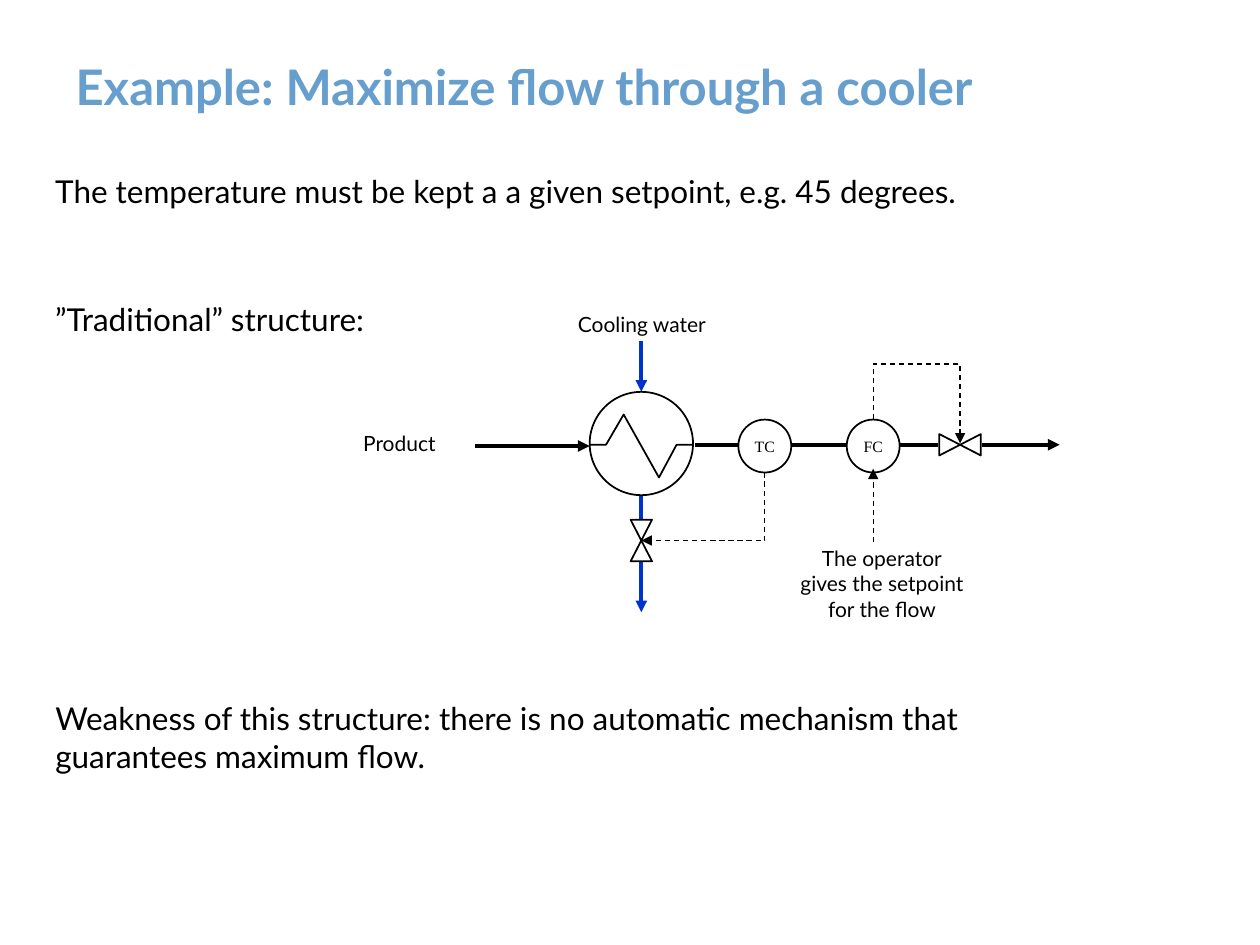
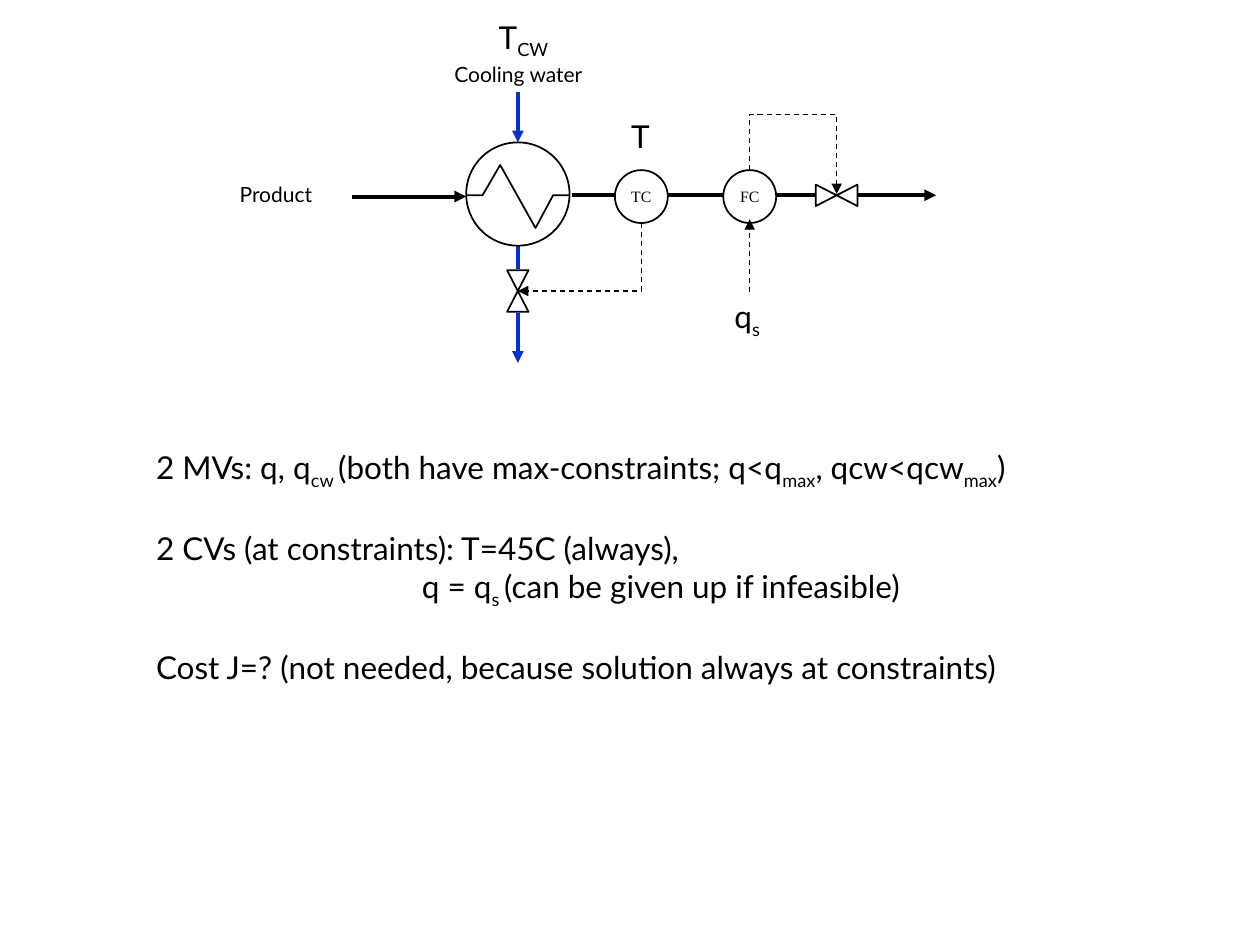
from lxml import etree
from pptx import Presentation, util as u
from pptx.dml.color import RGBColor
from pptx.enum import dml, shapes, text
from pptx.oxml.ns import qn

COLORS = {"title": "669ECD", "ink": "000000", "water": "0033CC", "paper": "FFFFFF"}
FONT = "Lato"
CENTER, LEFT = text.PP_ALIGN.CENTER, text.PP_ALIGN.LEFT
SHAPE = shapes.MSO_SHAPE


def write(frame, paragraphs, align=LEFT, **font_format):
    """Fill a text frame; every second piece between bars is a subscript."""
    values = {"size": u.Pt(18), "name": FONT, "bold": False, **font_format}
    color = values.pop("color", "ink")
    for number, line in enumerate(paragraphs):
        paragraph = frame.paragraphs[0] if number == 0 else frame.add_paragraph()
        paragraph.alignment = align
        for position, piece in enumerate(line.split("|")):
            run = paragraph.add_run()
            run.text = piece
            for attribute, value in values.items():
                setattr(run.font, attribute, value)
            run.font.color.rgb = RGBColor.from_string(COLORS[color])
            if position % 2:
                run._r.get_or_add_rPr().set("baseline", "-25000")


def draw_path(slide, points, color="ink", width=1.0, arrow=False, dashed=False):
    """Draw a connector through two points, or an open outline through more."""
    points = [(u.Inches(x), u.Inches(y)) for x, y in points]
    if len(points) == 2:
        path = slide.shapes.add_connector(shapes.MSO_CONNECTOR.STRAIGHT, *points[0], *points[1])
        etree.SubElement(path._element.spPr, qn("a:effectLst"))
    else:
        builder = slide.shapes.build_freeform(*points[0])
        builder.add_line_segments(points[1:], close=False)
        path = builder.convert_to_shape()
        path.fill.background()
        path.shadow.inherit = False
    path.line.color.rgb = RGBColor.from_string(COLORS[color])
    path.line.width = u.Pt(width)
    if dashed:
        path.line.dash_style = dml.MSO_LINE.DASH
    if arrow:
        etree.SubElement(path.line._get_or_add_ln(), qn("a:tailEnd"), type="triangle")


prs = Presentation()
prs.slide_width, prs.slide_height = u.Inches(10), u.Inches(7.5)
example = prs.slides.add_slide(prs.slide_layouts[5])
analysis = prs.slides.add_slide(prs.slide_layouts[6])

title = example.shapes.title
title.left, title.top, title.width, title.height = map(u.Inches, (0.5, 0.3, 8.91, 0.77))
title.text_frame.vertical_anchor = text.MSO_ANCHOR.MIDDLE
write(title.text_frame, ["Example: Maximize flow through a cooler"],
      size=u.Pt(28), bold=True, color="title")

# Cooler flowsheet, the same on both slides apart from its place
PIPE_Y, COOLER_X, TC_X, FC_X, FLOW_VALVE_X = 3.53, 5.09, 6.07, 6.93, 7.62
WATER_VALVE_Y, COOLER_SIZE, CONTROLLER_SIZE = 4.29, 0.82, 0.42
VALVE_LONG, VALVE_WIDE, MASK_WIDE = 0.33, 0.17, 0.21

pipes = [
    dict(points=[(3.77, 3.54), (4.68, 3.54)], width=2.25, arrow=True),
    dict(points=[(5.52, PIPE_Y), (8.41, PIPE_Y)], width=2.25, arrow=True),
    dict(points=[(COOLER_X, 3.9), (COOLER_X, 4.86)], color="water", width=2.25, arrow=True),
    dict(points=[(COOLER_X, 2.71), (COOLER_X, 3.11)], color="water", width=2.25, arrow=True),
]
# kind, centre x, centre y, width, height, rotation, line colour, label
equipment = [
    (SHAPE.RECTANGLE, FLOW_VALVE_X, PIPE_Y, VALVE_LONG, MASK_WIDE, 0, "paper", ""),
    (SHAPE.FLOWCHART_COLLATE, FLOW_VALVE_X, PIPE_Y, VALVE_WIDE, VALVE_LONG, 270, "ink", ""),
    (SHAPE.RECTANGLE, COOLER_X, WATER_VALVE_Y, MASK_WIDE, VALVE_LONG, 0, "paper", ""),
    (SHAPE.FLOWCHART_COLLATE, COOLER_X, WATER_VALVE_Y, VALVE_WIDE, VALVE_LONG, 0, "ink", ""),
    (SHAPE.OVAL, COOLER_X, 3.52, COOLER_SIZE, COOLER_SIZE, 0, "ink", ""),
    (SHAPE.OVAL, TC_X, 3.54, CONTROLLER_SIZE, CONTROLLER_SIZE, 0, "ink", "TC"),
    (SHAPE.OVAL, FC_X, 3.54, CONTROLLER_SIZE, CONTROLLER_SIZE, 0, "ink", "FC"),
]
coil = [(4.68, PIPE_Y), (4.81, PIPE_Y), (4.95, 3.29), (5.23, 3.79), (5.37, PIPE_Y), (5.5, PIPE_Y)]
signals = [
    [(TC_X, 3.75), (TC_X, WATER_VALVE_Y), (COOLER_X, WATER_VALVE_Y)],
    [(FC_X, 3.33), (FC_X, 2.89), (FLOW_VALVE_X, 2.89), (FLOW_VALVE_X, 3.52)],
    [(FC_X, 4.3), (FC_X, 3.72)],
]
stream_names = [("Cooling water", 4.33, 2.42, 1.53), ("Product", 2.6, 3.37, 1.14)]

for slide, dx, dy in [(example, 0, 0), (analysis, -0.98, -1.98)]:
    for pipe in pipes:
        moved = [(x + dx, y + dy) for x, y in pipe["points"]]
        draw_path(slide, **{**pipe, "points": moved})
    for kind, x, y, width, height, rotation, outline, label in equipment:
        unit = slide.shapes.add_shape(kind, *map(u.Inches, (
            x + dx - width / 2, y + dy - height / 2, width, height)))
        unit.rotation = rotation
        unit.shadow.inherit = False
        unit.fill.solid()
        unit.fill.fore_color.rgb = RGBColor.from_string(COLORS["paper"])
        unit.line.color.rgb = RGBColor.from_string(COLORS[outline])
        unit.line.width = u.Pt(1)
        if label:
            unit.text_frame.word_wrap = False
            unit.text_frame.vertical_anchor = text.MSO_ANCHOR.MIDDLE
            write(unit.text_frame, [label], CENTER, size=u.Pt(9), name="Times New Roman")
    draw_path(slide, [(x + dx, y + dy) for x, y in coil])
    for signal in signals:
        draw_path(slide, [(x + dx, y + dy) for x, y in signal],
                  width=0.75, arrow=True, dashed=True)
    for name, x, y, width in stream_names:
        caption = slide.shapes.add_textbox(*map(u.Inches, (x + dx, y + dy, width, 0.3)))
        caption.text_frame.word_wrap = True
        write(caption.text_frame, [name], CENTER, size=u.Pt(12))

operator = example.shapes.add_textbox(*map(u.Inches, (6.26, 4.29, 1.48, 0.69))).text_frame
operator.word_wrap = True
for side in ("left", "top", "right", "bottom"):
    setattr(operator, f"margin_{side}", u.Inches(0.04))
write(operator, ["The operator", "gives the setpoint for the flow"], CENTER, size=u.Pt(12))

statements = [
    (example, (0.34, 1.32, 8.33, 0.4),
     ["The temperature must be kept a a given setpoint, e.g. 45 degrees."]),
    (example, (0.34, 2.33, 3.13, 0.4), ["”Traditional” structure:"]),
    (example, (0.34, 5.5, 8.21, 0.71),
     ["Weakness of this structure: there is no automatic mechanism that "
      "guarantees maximum flow."]),
    (analysis, (5.73, 2.31, 0.42, 0.4), ["q|s"]),
    (analysis, (4.91, 0.88, 0.35, 0.4), ["T"]),
    (analysis, (3.86, 0.09, 0.6, 0.4), ["T|CW"]),
    (analysis, (1.14, 3.51, 7.36, 1.92),
     ["2 MVs: q, q|cw |(both have max-constraints; q<q|max|, qcw<qcw|max|)",
      "2 CVs (at constraints): T=45C (always),",
      "q = q|s |(can be given up if infeasible)",
      "Cost J=? (not needed, because solution always at constraints)"]),
]
for slide, box, lines in statements:
    statement = slide.shapes.add_textbox(*map(u.Inches, box)).text_frame
    statement.word_wrap = box[2] > 1
    write(statement, lines)

# The last statement holds the control problem: three groups, one continued line
_, variables, continued, cost = statement.paragraphs
for group in (variables, cost):
    group.space_before = u.Pt(21.6)
continued._p.get_or_add_pPr().set("marL", str(u.Inches(2.11)))

prs.save("out.pptx")
